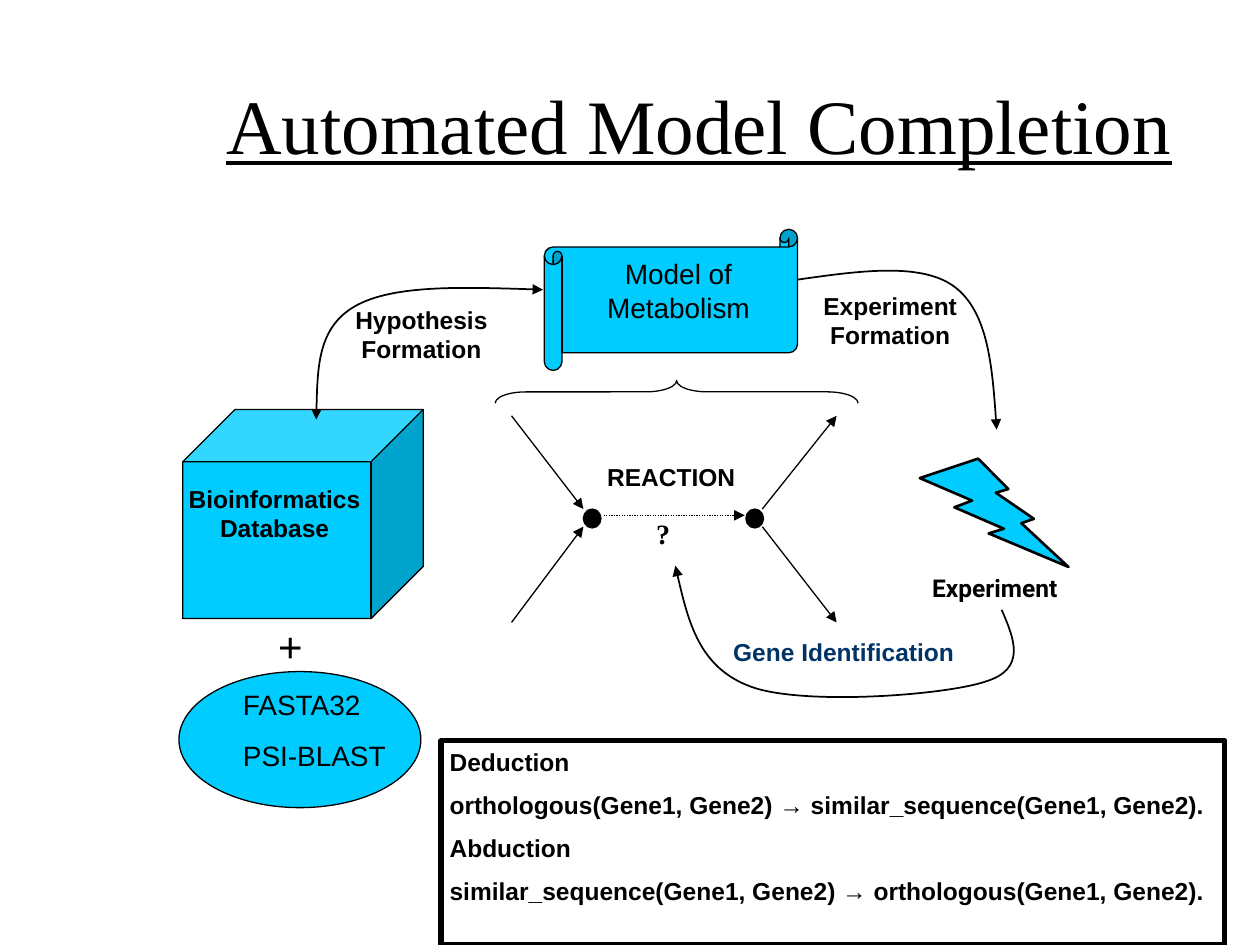
from dataclasses import dataclass
from typing import Any

from lxml import etree
from pptx import Presentation
from pptx.dml.color import RGBColor
from pptx.enum.dml import MSO_LINE
from pptx.enum.shapes import MSO_CONNECTOR, MSO_SHAPE
from pptx.enum.text import MSO_ANCHOR, PP_ALIGN
from pptx.oxml.ns import qn
from pptx.util import Inches, Pt

CENTER, LEFT = PP_ALIGN.CENTER, PP_ALIGN.LEFT
TOP, MIDDLE = MSO_ANCHOR.TOP, MSO_ANCHOR.MIDDLE
STRAIGHT, DOTTED = MSO_CONNECTOR.STRAIGHT, MSO_LINE.ROUND_DOT
CUBE, OVAL, SCROLL = MSO_SHAPE.CUBE, MSO_SHAPE.OVAL, MSO_SHAPE.HORIZONTAL_SCROLL
BRACE, BOLT, FRAME = MSO_SHAPE.LEFT_BRACE, MSO_SHAPE.LIGHTNING_BOLT, MSO_SHAPE.RECTANGLE
COLUMNS, ROWS = 10, 7.5


def paint(target, color):
    target.fill.solid()
    target.fill.fore_color.rgb = RGBColor.from_string(color)


def write(paragraph, text, size=14, font="Arial", color="000000", bold=False,
          underline=False, align=LEFT, before=0, leading=None, indent=0):
    paragraph.alignment = align
    paragraph.space_before = Pt(before)
    if leading:
        paragraph.line_spacing = Pt(leading)
    if indent:
        paragraph._p.get_or_add_pPr().set("marL", str(Inches(indent)))
    run = paragraph.add_run()
    run.text = text
    run.font.size, run.font.name = Pt(size), font
    run.font.bold, run.font.underline = bold, underline
    paint(run.font, color)


@dataclass
class Diagram:
    """Style and current slide, measured in grid columns and rows."""

    slide: Any
    column: float
    row: float
    ink: str = "000000"
    accent: str = "00CCFF"

    def place(self, x, y):
        return round(x * self.column), round(y * self.row)

    def outline(self, line, weight):
        paint(line, self.ink)
        line.width = Pt(weight)

    def arrowheads(self, line, ends):
        for end in ends:
            etree.SubElement(line._get_or_add_ln(), qn(f"a:{end}")).set("type", "triangle")

    def shape(self, preset, x, y, w, h, fill=None, weight=0.75, adjustment=None, rotation=0):
        shape = self.slide.shapes.add_shape(preset, *self.place(x, y), *self.place(w, h))
        shape.shadow.inherit = False
        shape.rotation = rotation
        if adjustment is not None:
            shape.adjustments[0] = adjustment
        if fill:
            paint(shape, fill)
        else:
            shape.fill.background()
        self.outline(shape.line, weight)

    def text(self, x, y, w, h, *lines, anchor=TOP, **style):
        box = self.slide.shapes.add_textbox(*self.place(x, y), *self.place(w, h))
        frame = box.text_frame
        frame.word_wrap = True
        frame.vertical_anchor = anchor
        for number, line in enumerate(lines):
            paragraph = frame.add_paragraph() if number else frame.paragraphs[0]
            words, extra = line if isinstance(line, tuple) else (line, {})
            write(paragraph, words, **{**style, **extra})

    def arrow(self, start, end, dash=None):
        arrow = self.slide.shapes.add_connector(STRAIGHT, *self.place(*start), *self.place(*end))
        self.outline(arrow.line, 0.75)
        if dash:
            arrow.line.dash_style = dash
        self.arrowheads(arrow.line, ["tailEnd"])
        etree.SubElement(arrow._element.spPr, qn("a:effectLst"))

    def curve(self, start, *controls, ends=("tailEnd",)):
        builder = self.slide.shapes.build_freeform(*self.place(*start))
        builder.add_line_segments([self.place(*point) for point in controls], close=False)
        curve = builder.convert_to_shape()
        curve.shadow.inherit = False
        curve.fill.background()
        self.outline(curve.line, 1)
        self.arrowheads(curve.line, ends)
        segments = list(curve._element.iter(qn("a:lnTo")))
        outline = segments[0].getparent()
        for first in range(0, len(segments), 3):
            bezier = etree.SubElement(outline, qn("a:cubicBezTo"))
            for segment in segments[first:first + 3]:
                bezier.append(segment[0])
                outline.remove(segment)


def main():
    deck = Presentation()
    deck.slide_width, deck.slide_height = Inches(10), Inches(7.5)
    slide = deck.slides.add_slide(deck.slide_layouts[6])
    model = Diagram(slide, deck.slide_width / COLUMNS, deck.slide_height / ROWS)

    model.shape(CUBE, 1.45, 3.25, 1.91, 1.66, model.accent, adjustment=0.25)
    model.text(1.25, 3.79, 1.86, 0.88, "Bioinformatics", "Database", bold=True, align=CENTER)

    for node in (4.63, 5.92):
        model.shape(OVAL, node, 4.04, 0.14, 0.15, model.ink)
    for outer, inner in ((3.3, 4.04), (4.94, 4.18)):
        model.arrow((4.06, outer), (4.63, inner))
        model.arrow((6.05, inner), (6.64, outer))
    model.arrow((4.79, 4.09), (5.91, 4.09), dash=DOTTED)
    model.text(5.11, 4.05, 0.32, 0.52, "?", size=16, font="Times New Roman", bold=True)

    model.shape(SCROLL, 4.32, 1.82, 2.01, 1.12, model.accent, adjustment=0.125)
    model.text(4.6, 1.99, 1.57, 0.83, "Model of", "Metabolism", size=16, align=CENTER)
    model.shape(BRACE, 5.28, 1.67, 0.18, 2.88, adjustment=1.35, rotation=90)

    model.text(2.59, 2.37, 1.51, 0.83, "Hypothesis", "Formation", bold=True, align=CENTER)
    model.text(6.32, 2.26, 1.49, 0.7, "Experiment", "Formation", bold=True, align=CENTER)
    model.curve((2.51, 3.33), (2.52, 2.97), (2.52, 2.6), (2.82, 2.43),
                (3.12, 2.26), (3.71, 2.28), (4.31, 2.3), ends=("headEnd", "tailEnd"))
    model.curve((6.33, 2.22), (6.82, 2.15), (7.32, 2.08), (7.58, 2.28),
                (7.84, 2.48), (7.88, 2.95), (7.91, 3.41))
    model.curve((7.95, 4.84), (8.05, 5.07), (8.15, 5.31), (7.82, 5.41), (7.49, 5.52),
                (6.37, 5.6), (5.96, 5.45), (5.55, 5.3), (5.45, 4.89), (5.36, 4.49))
    model.text(5.72, 5.01, 2.11, 0.47, "Gene Identification", color="003366", bold=True)
    model.text(4.72, 3.62, 1.26, 0.53, "REACTION", bold=True)

    model.shape(BOLT, 7.3, 3.64, 1.18, 0.86, model.accent, weight=1.5)
    model.text(7.3, 4.5, 1.5, 0.33, "Experiment", font="Roboto", bold=True, before=8.8)

    model.shape(OVAL, 1.42, 5.33, 1.92, 1.08, model.accent)
    model.text(1.83, 5, 1.92, 1.2, ("+", {"size": 24, "indent": 0.28}),
               "FASTA32", "PSI-BLAST", size=16, before=8.8, leading=20)

    model.text(1.3, 0.36, 8.5, 1.25, "Automated Model Completion", size=44,
               font="Times New Roman", underline=True, align=CENTER, anchor=MIDDLE)

    model.text(3.47, 5.88, 6.53, 1.38, "Deduction",
               "orthologous(Gene1, Gene2) → similar_sequence(Gene1, Gene2).",
               "Abduction",
               "similar_sequence(Gene1, Gene2) → orthologous(Gene1, Gene2).",
               bold=True, before=7.7)
    model.shape(FRAME, 3.5, 5.88, 6.22, 1.62, weight=3)

    deck.save("out.pptx")


if __name__ == "__main__":
    main()
